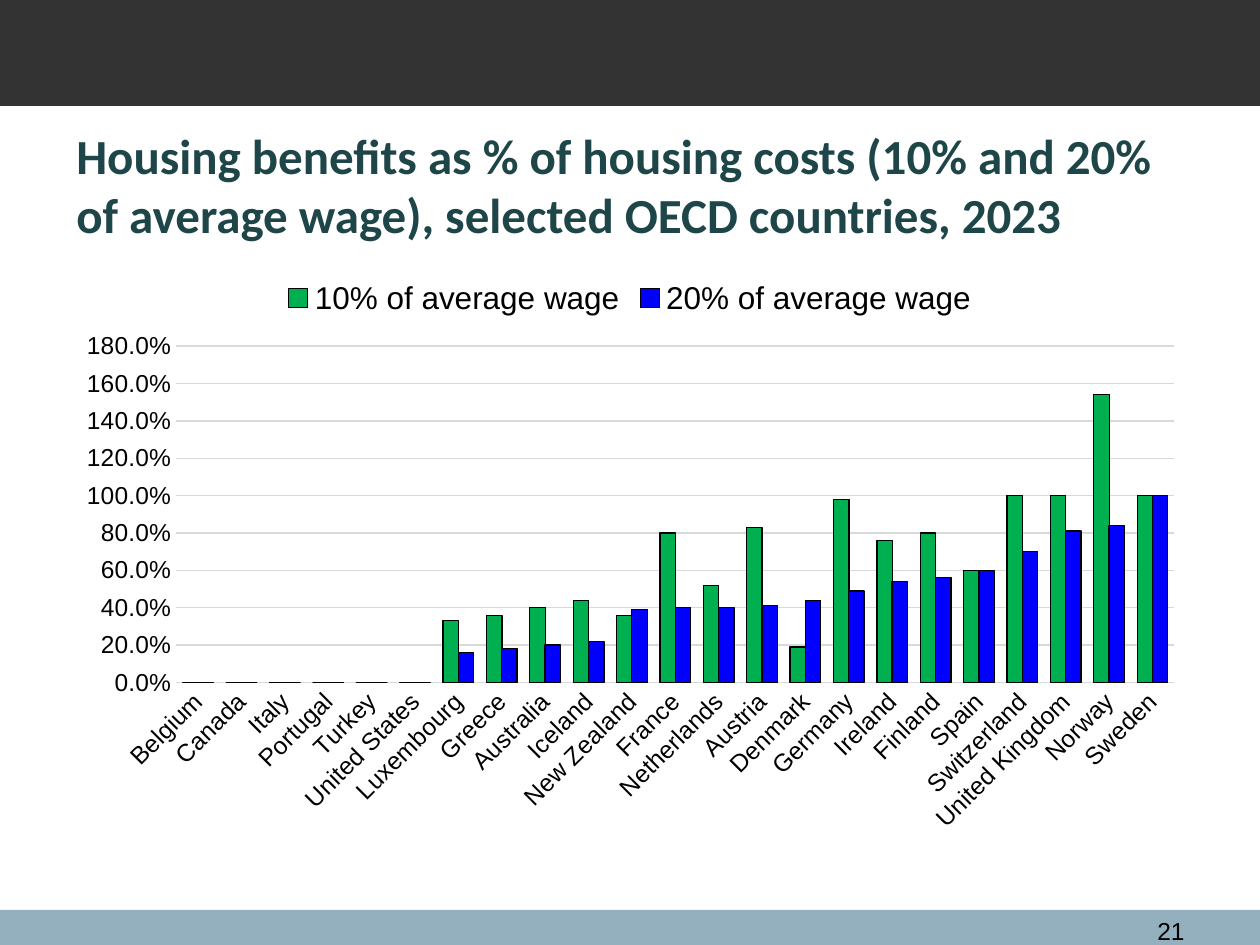
import pptx
import pptx.chart.data
import pptx.dml.color
import pptx.enum.chart
import pptx.enum.shapes
import pptx.enum.text
import pptx.oxml
import pptx.oxml.ns
import pptx.util

# Content
TITLE = ("Housing benefits as % of housing costs (10% and 20% of average wage), "
         "selected OECD countries, 2023")
PAGE_NUMBER = "21"
SERIES = [("10% of average wage", "green"), ("20% of average wage", "blue")]
BENEFITS = [
    ("Belgium", 0, 0), ("Canada", 0, 0), ("Italy", 0, 0), ("Portugal", 0, 0),
    ("Turkey", 0, 0), ("United States", 0, 0), ("Luxembourg", 0.33, 0.16),
    ("Greece", 0.36, 0.18), ("Australia", 0.4, 0.2), ("Iceland", 0.44, 0.22),
    ("New Zealand", 0.36, 0.39), ("France", 0.8, 0.4), ("Netherlands", 0.52, 0.4),
    ("Austria", 0.83, 0.41), ("Denmark", 0.19, 0.44), ("Germany", 0.98, 0.49),
    ("Ireland", 0.76, 0.54), ("Finland", 0.8, 0.56), ("Spain", 0.6, 0.6),
    ("Switzerland", 1, 0.7), ("United Kingdom", 1, 0.81), ("Norway", 1.54, 0.84),
    ("Sweden", 1, 1),
]

# Theme and places (left, top, width, height in px)
THEME = {
    "colors": {"dark": "333333", "steel": "94B0BE", "title": "1E4649", "black": "000000",
               "grid": "D9D9D9", "green": "00B050", "blue": "0000FF"},
    "title": {"name": "Calibri", "size": 28, "bold": True, "color": "title"},
    "label": {"name": "Arial", "size": 14, "bold": False, "color": "black"},
    "legend": {"name": "Arial", "size": 18, "bold": False, "color": "black"},
    "line": 0.75,
}
WIDTH, HEIGHT = 1260, 945
BANDS = [((0, 910, WIDTH, 35), "steel"), ((0, 0, WIDTH, 106), "dark")]
TITLE_AREA = (64, 106, 1134, 157)
NUMBER_AREA = (1116, 910, 81, 30)
CHART_AREA = (63, 265, 1134, 580)
PLOT_AREA = (175, 347, 999, 336)


def px(length):
    return round(length * 914400 / 126)


def place(area):
    return [px(length) for length in area]


def rgb(name):
    return pptx.dml.color.RGBColor.from_string(THEME["colors"][name])


def set_font(font, style):
    values = dict(THEME[style])
    font.color.rgb = rgb(values.pop("color"))
    values["size"] = pptx.util.Pt(values["size"])
    for name, value in values.items():
        setattr(font, name, value)


def set_line(line, color):
    line.color.rgb = rgb(color)
    line.width = pptx.util.Pt(THEME["line"])


def add_text(page, area, text, style, anchor, align):
    box = page.shapes.add_textbox(*place(area))
    box.text_frame.word_wrap = True
    box.text_frame.vertical_anchor = anchor
    para = box.text_frame.paragraphs[0]
    para.alignment = align
    span = para.add_run()
    span.text = text
    set_font(span.font, style)


def fix_plot_area(chart):
    left, top, width, height = CHART_AREA
    x, y, w, h = PLOT_AREA
    shares = {"x": (x - left) / width, "y": (y - top) / height, "w": w / width, "h": h / height}
    parts = [("layoutTarget", "inner"), ("xMode", "edge"), ("yMode", "edge")]
    parts += [(name, f"{share:.2f}") for name, share in shares.items()]
    body = "".join(f'<c:{name} val="{value}"/>' for name, value in parts)
    layout = pptx.oxml.parse_xml(
        f'<c:layout {pptx.oxml.ns.nsdecls("c")}><c:manualLayout>{body}</c:manualLayout></c:layout>')
    plot_area = chart._chartSpace.chart.plotArea
    for old in plot_area.findall(pptx.oxml.ns.qn("c:layout")):
        plot_area.remove(old)
    plot_area.insert(0, layout)


def add_benefit_chart(page):
    countries, *columns = zip(*BENEFITS)
    data = pptx.chart.data.CategoryChartData(number_format="0.0%")
    data.categories = countries
    for (name, _), values in zip(SERIES, columns):
        data.add_series(name, values)
    kind = pptx.enum.chart.XL_CHART_TYPE.COLUMN_CLUSTERED
    chart = page.shapes.add_chart(kind, *place(CHART_AREA), data).chart
    chart.has_title = False
    set_font(chart.font, "label")

    # Bars
    plot = chart.plots[0]
    for name, value in {"gap_width": 83, "overlap": 1, "vary_by_categories": False}.items():
        setattr(plot, name, value)
    for series, (_, color) in zip(plot.series, SERIES):
        series.invert_if_negative = False
        series.format.fill.solid()
        series.format.fill.fore_color.rgb = rgb(color)
        set_line(series.format.line, "black")

    # Axes
    for axis in (chart.category_axis, chart.value_axis):
        axis.major_tick_mark = axis.minor_tick_mark = pptx.enum.chart.XL_TICK_MARK.NONE
        set_font(axis.tick_labels.font, "label")
    set_line(chart.category_axis.format.line, "grid")
    chart.category_axis._element.txPr.bodyPr.set("rot", "-2700000")
    scale = {"minimum_scale": 0, "maximum_scale": 1.8, "major_unit": 0.2,
             "has_major_gridlines": True}
    for name, value in scale.items():
        setattr(chart.value_axis, name, value)
    chart.value_axis.format.line.fill.background()
    set_line(chart.value_axis.major_gridlines.format.line, "grid")
    chart.value_axis.tick_labels.number_format = "0.0%"
    chart.value_axis.tick_labels.number_format_is_linked = False

    # Legend
    chart.has_legend = True
    chart.legend.position = pptx.enum.chart.XL_LEGEND_POSITION.TOP
    chart.legend.include_in_layout = False
    set_font(chart.legend.font, "legend")
    fix_plot_area(chart)


def main():
    deck = pptx.Presentation()
    deck.slide_width, deck.slide_height = px(WIDTH), px(HEIGHT)
    page = deck.slides.add_slide(deck.slide_layouts[6])
    anchors, aligns = pptx.enum.text.MSO_ANCHOR, pptx.enum.text.PP_ALIGN

    # Bands at the foot and the head
    for area, color in BANDS:
        band = page.shapes.add_shape(pptx.enum.shapes.MSO_SHAPE.RECTANGLE, *place(area))
        band.shadow.inherit = False
        band.fill.solid()
        band.fill.fore_color.rgb = rgb(color)
        band.line.fill.background()

    # Texts and chart
    add_text(page, TITLE_AREA, TITLE, "title", anchors.MIDDLE, aligns.LEFT)
    add_text(page, NUMBER_AREA, PAGE_NUMBER, "label", anchors.TOP, aligns.RIGHT)
    add_benefit_chart(page)
    deck.save("out.pptx")


if __name__ == "__main__":
    main()
